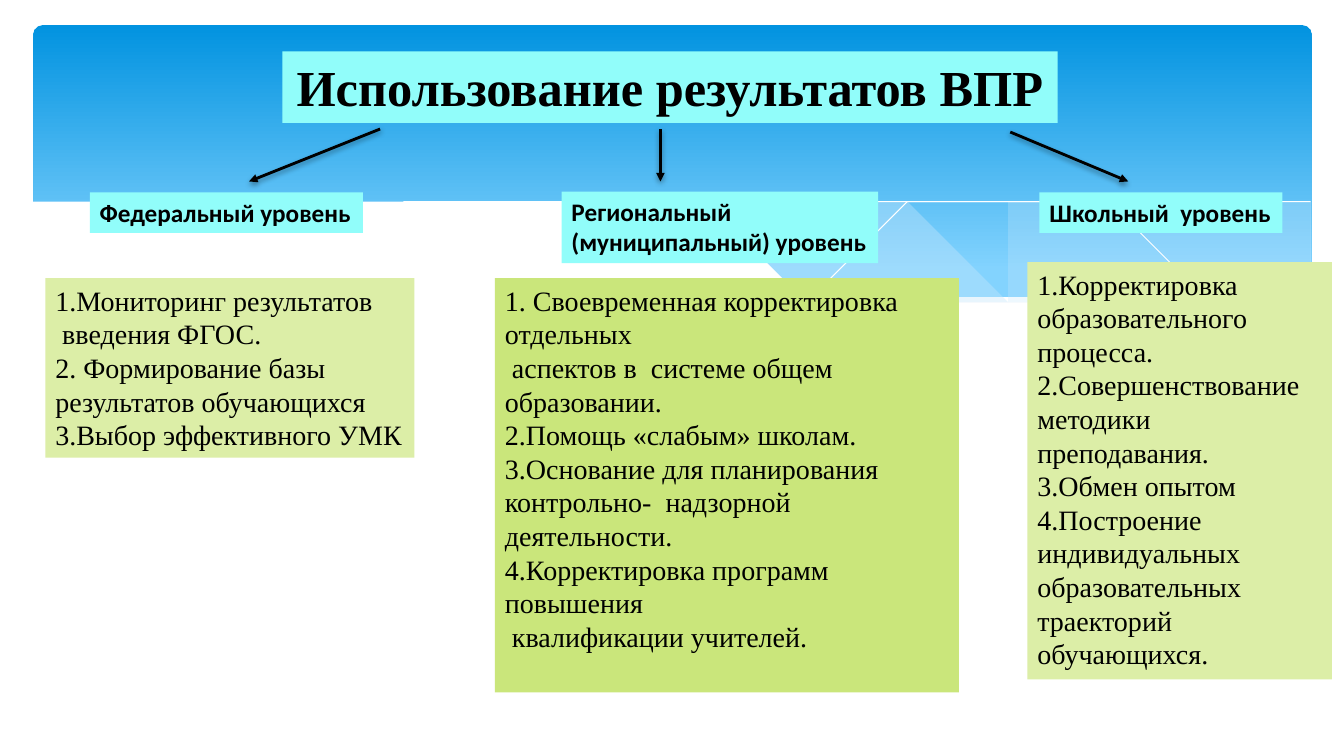
from lxml.etree import SubElement
from pptx import Presentation
from pptx.dml.color import RGBColor
from pptx.enum.shapes import MSO_CONNECTOR, MSO_SHAPE
from pptx.enum.text import MSO_ANCHOR, MSO_AUTO_SIZE, PP_ALIGN
from pptx.oxml import parse_xml
from pptx.oxml.ns import nsdecls, qn
from pptx.util import Inches, Pt

BLACK = RGBColor(0x00, 0x00, 0x00)
WHITE = RGBColor(0xFF, 0xFF, 0xFF)
SKY_DEEP = RGBColor(0x02, 0x93, 0xE0)
SKY_LIGHT = RGBColor(0x83, 0xD3, 0xFE)
MIST = RGBColor(0xC6, 0xE7, 0xFC)
AQUA = RGBColor(0x91, 0xFD, 0xFA)
LIME = RGBColor(0xCA, 0xE6, 0x7B)
PALE_LIME = RGBColor(0xDC, 0xEE, 0xA7)

SERIF = "Times New Roman"
SANS = "Calibri"

# Wave outlines, in inches from the corner of the backdrop
RIGHT_WAVE = [
    (13.01, 1.99), (12.46, 2.07), (11.88, 2.16), (11.1, 2.3), (10.38, 2.42),
    (9.72, 2.53), (8.82, 2.65), (9.4, 2.71), (9.93, 2.75), (10.41, 2.77),
    (10.85, 2.78), (11.26, 2.77), (11.63, 2.74), (11.96, 2.7), (12.28, 2.65),
    (12.57, 2.59), (12.84, 2.52), (13.01, 2.47)]
MIDDLE_WAVE = [
    (11.9, 2.73), (11.16, 2.65), (10.33, 2.54), (9.41, 2.4), (8.38, 2.22),
    (7.78, 2.11), (7.21, 2.03), (6.69, 1.96), (6.19, 1.91), (5.6, 1.87),
    (5.06, 1.86), (4.59, 1.86), (4.18, 1.88), (3.82, 1.91), (4.31, 1.96),
    (4.83, 2.03), (5.39, 2.11), (5.99, 2.22), (7.06, 2.4), (8.02, 2.55),
    (8.87, 2.66), (9.63, 2.74), (10.3, 2.77), (10.9, 2.78), (11.43, 2.77)]
FALLING_LINE = [
    (4.12, 1.95), (4.38, 1.92), (4.7, 1.89), (5.16, 1.87), (5.77, 1.87),
    (6.25, 1.89), (6.8, 1.92), (7.42, 1.97), (8.11, 2.04), (8.86, 2.13),
    (9.7, 2.26), (10.6, 2.41), (11.58, 2.61), (12.1, 2.72)]
RISING_LINE = [
    (8.18, 2.57), (8.7, 2.46), (9.27, 2.35), (9.97, 2.23), (10.75, 2.1),
    (11.55, 1.99), (11.94, 1.94), (12.32, 1.9), (12.67, 1.87), (13, 1.85)]
WHITE_WAVE = [
    (13.03, 2.46), (12.79, 2.53), (12.53, 2.59), (12.27, 2.65), (11.98, 2.69),
    (11.67, 2.73), (11.34, 2.75), (10.97, 2.77), (10.58, 2.76), (10.15, 2.75),
    (9.69, 2.72), (9.18, 2.68), (8.63, 2.62), (8.04, 2.54), (7.4, 2.45),
    (6.71, 2.33), (5.96, 2.2), (5.21, 2.07), (4.53, 1.97), (3.9, 1.91),
    (3.33, 1.86), (2.82, 1.84), (2.35, 1.84), (1.94, 1.85), (1.58, 1.87),
    (1.27, 1.91), (1.01, 1.95), (0.79, 1.99), (0.61, 2.03), (0.48, 2.07),
    (0.38, 2.1), (0.31, 2.13), (0.31, 3.29), (13.03, 3.29)]

TITLE = "Использование результатов ВПР"
TITLE_BOX = (2.8, 0.51, 7.69, 0.71)
# Arrow starts and ends, from the corner of the title
ARROWS = [((0.97, 0.77), (-0.33, 1.29)),
          ((3.75, 0.77), (3.75, 1.29)),
          ((7.22, 0.8), (8.39, 1.29))]

# Body box, label box from the body's corner, body colour, label lines, items
LEVELS = [
    ((0.45, 2.76, 3.66, 1.78), (0.44, -0.85, 2.71, 0.4), PALE_LIME,
     ["Федеральный уровень"],
     ["1.Мониторинг результатов",
      " введения ФГОС.",
      "2. Формирование базы результатов обучающихся",
      "3.Выбор эффективного УМК"]),
    ((4.91, 2.76, 4.6, 4.11), (0.66, -0.86, 3.14, 0.71), LIME,
     ["Региональный", "(муниципальный) уровень"],
     ["1. Своевременная корректировка отдельных",
      " аспектов в  системе общем образовании.",
      "2.Помощь «слабым» школам.",
      "3.Основание для планирования контрольно-  надзорной деятельности.",
      "4.Корректировка программ повышения",
      " квалификации учителей."]),
    ((10.19, 2.6, 3.02, 4.14), (0.12, -0.69, 2.41, 0.4), PALE_LIME,
     ["Школьный  уровень"],
     ["1.Корректировка образовательного процесса.",
      "2.Совершенствование методики преподавания.",
      "3.Обмен опытом",
      "4.Построение индивидуальных образовательных траекторий обучающихся."]),
]


def fill_solid(shape, color, opacity=100):
    shape.fill.solid()
    shape.fill.fore_color.rgb = color
    if opacity < 100:
        color_element = shape.fill._xPr.find(".//" + qn("a:srgbClr"))
        SubElement(color_element, qn("a:alpha"), val=str(opacity * 1000))


def draw_curve(slide, left, top, points, closed):
    placed = [(left + x, top + y) for x, y in points]
    builder = slide.shapes.build_freeform(*placed[0], scale=Inches(1))
    builder.add_line_segments(placed[1:], close=closed)
    shape = builder.convert_to_shape()
    shape.shadow.inherit = False
    return shape


def draw_backdrop(slide, left, top):
    # Blue banner
    banner = slide.shapes.add_shape(
        MSO_SHAPE.ROUNDED_RECTANGLE, Inches(left + 0.33), Inches(top + 0.25),
        Inches(12.68), Inches(2.7))
    banner.adjustments[0] = 0.034
    banner.shadow.inherit = False
    banner.line.fill.background()
    banner.fill.gradient()
    banner.fill.gradient_angle = 270
    stops = zip(banner.fill.gradient_stops, (SKY_DEEP, SKY_LIGHT), (0, 0.9))
    for stop, color, position in stops:
        stop.color.rgb = color
        stop.position = position

    # Translucent waves, thin lines, then the white wave
    for points, color, opacity in ((RIGHT_WAVE, MIST, 29),
                                   (MIDDLE_WAVE, MIST, 40),
                                   (FALLING_LINE, None, 0),
                                   (RISING_LINE, None, 0),
                                   (WHITE_WAVE, WHITE, 100)):
        curve = draw_curve(slide, left, top, points, color is not None)
        if color is None:
            curve.fill.background()
            curve.line.color.rgb = WHITE
            curve.line.width = Pt(0)
        else:
            fill_solid(curve, color, opacity)
            curve.line.fill.background()


def write_text(shape, lines, font_name, size, bold, wrap, align=PP_ALIGN.LEFT):
    frame = shape.text_frame
    frame.text = "\n".join(lines)
    frame.word_wrap = wrap
    frame.auto_size = MSO_AUTO_SIZE.NONE
    frame.vertical_anchor = MSO_ANCHOR.TOP
    for paragraph in frame.paragraphs:
        paragraph.alignment = align
        paragraph.font.name = font_name
        paragraph.font.size = Pt(size)
        paragraph.font.bold = bold
        paragraph.font.color.rgb = BLACK


def draw_arrow(slide, start, end):
    arrow = slide.shapes.add_connector(
        MSO_CONNECTOR.STRAIGHT, *(Inches(value) for value in start + end))
    arrow.line.color.rgb = BLACK
    arrow.line.width = Pt(2)
    SubElement(arrow.line._get_or_add_ln(), qn("a:tailEnd"), type="triangle")
    arrow._element.spPr.append(parse_xml(
        f'<a:effectLst {nsdecls("a")}>'
        '<a:outerShdw blurRad="50800" dist="25400" dir="5400000" rotWithShape="0">'
        '<a:srgbClr val="000000"><a:alpha val="38000"/></a:srgbClr>'
        '</a:outerShdw></a:effectLst>'))


def draw_header(slide, left, top, width, height):
    title = slide.shapes.title
    title.left, title.top = Inches(left), Inches(top)
    title.width, title.height = Inches(width), Inches(height)
    fill_solid(title, AQUA)
    write_text(title, [TITLE], SERIF, 36, True, False, PP_ALIGN.CENTER)
    # Bring the title in front of the backdrop
    title._element.getparent().append(title._element)
    for start, end in ARROWS:
        draw_arrow(slide, (left + start[0], top + start[1]),
                   (left + end[0], top + end[1]))


def add_panel(slide, box, color):
    panel = slide.shapes.add_textbox(*(Inches(value) for value in box))
    fill_solid(panel, color)
    return panel


def draw_level(slide, box, label_box, color, label_lines, items):
    left, top = box[:2]
    dx, dy, width, height = label_box
    label = add_panel(slide, (left + dx, top + dy, width, height), AQUA)
    write_text(label, label_lines, SANS, 18, True, False)
    body = add_panel(slide, box, color)
    write_text(body, items, SERIF, 20, False, True)


def main():
    presentation = Presentation()
    presentation.slide_width = Inches(13.33)
    presentation.slide_height = Inches(7.5)
    slide = presentation.slides.add_slide(presentation.slide_layouts[5])
    draw_backdrop(slide, 0, 0)
    draw_header(slide, *TITLE_BOX)
    for level in LEVELS:
        draw_level(slide, *level)
    presentation.save("out.pptx")


if __name__ == "__main__":
    main()
